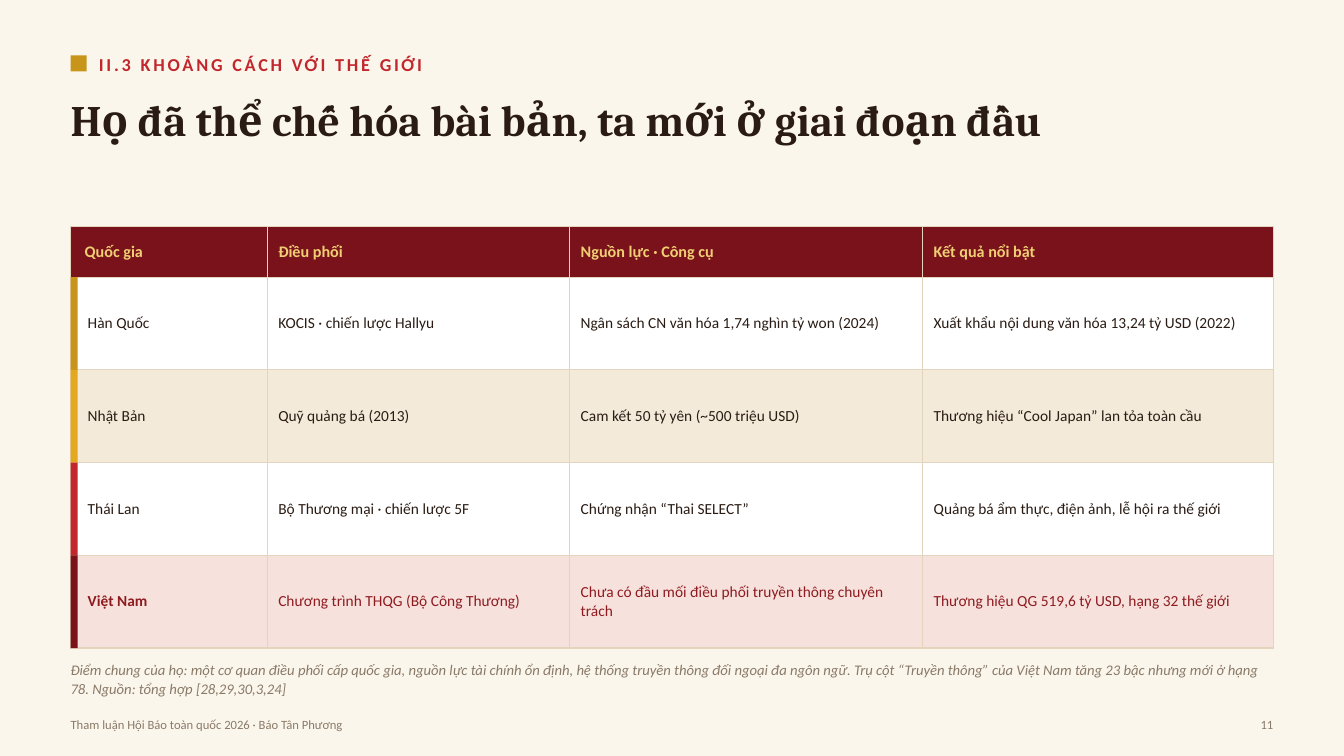
from dataclasses import dataclass

from lxml import etree
from pptx import Presentation
from pptx.dml.color import RGBColor
from pptx.enum.shapes import MSO_SHAPE
from pptx.enum.text import MSO_ANCHOR, MSO_AUTO_SIZE, PP_ALIGN
from pptx.oxml.ns import qn
from pptx.slide import Slide
from pptx.table import _Cell
from pptx.text.text import TextFrame
from pptx.util import Inches, Pt

RECTANGLE = MSO_SHAPE.RECTANGLE
TOP, MIDDLE = MSO_ANCHOR.TOP, MSO_ANCHOR.MIDDLE
LEFT, RIGHT = PP_ALIGN.LEFT, PP_ALIGN.RIGHT
NO_AUTOFIT = MSO_AUTO_SIZE.NONE


@dataclass(frozen=True)
class TextStyle:
    size: float
    color: str
    font: str = "Calibri"
    bold: bool = False
    italic: bool = False
    tracking: float = 0


@dataclass(frozen=True)
class Theme:
    paper: str = "FBF6EC"
    white: str = "FFFFFF"
    sand: str = "F4EADA"
    blush: str = "F7E1DC"
    grid: str = "E3D4BD"
    gold: str = "C8951B"
    amber: str = "E3A81E"
    red: str = "C1272D"
    maroon: str = "7A121B"
    section: TextStyle = TextStyle(13, "C1272D", bold=True, tracking=2)
    title: TextStyle = TextStyle(31, "2A1C14", font="Cambria", bold=True)
    header: TextStyle = TextStyle(11.5, "F0CE73", bold=True)
    body: TextStyle = TextStyle(11, "2A1C14")
    home: TextStyle = TextStyle(11, "8E1B20")
    home_name: TextStyle = TextStyle(11, "8E1B20", bold=True)
    note: TextStyle = TextStyle(10.5, "8A7A68", italic=True)
    footer: TextStyle = TextStyle(9, "8A7A68")


@dataclass(frozen=True)
class Box:
    left: float
    top: float
    width: float
    height: float


@dataclass(frozen=True)
class Label:
    text: str
    box: Box
    style: TextStyle
    anchor: MSO_ANCHOR = MIDDLE
    align: PP_ALIGN = LEFT
    line_spacing: float = 1.0


@dataclass(frozen=True)
class Country:
    texts: tuple[str, str, str, str]
    accent: str
    fill: str
    name_style: TextStyle
    detail_style: TextStyle


THEME = Theme()
MARGIN, CONTENT_WIDTH = 0.7, 11.93
TABLE_TOP, HEADER_HEIGHT, COUNTRY_HEIGHT = 2.25, 0.5, 0.92
COLUMN_WIDTHS = (1.95, 3, 3.5, 3.48)
ACCENT_WIDTH = 0.07
CELL_INSET, HEADER_FIRST_INSET, NAME_INSET = 0.11, 0.14, 0.17

TITLE = Label("Họ đã thể chế hóa bài bản, ta mới ở giai đoạn đầu",
              Box(MARGIN, 0.92, CONTENT_WIDTH, 1), THEME.title, TOP)
LABELS = (
    Label("II.3 KHOẢNG CÁCH VỚI THẾ GIỚI", Box(0.98, 0.47, 11.63, 0.34), THEME.section),
    Label("Điểm chung của họ: một cơ quan điều phối cấp quốc gia, nguồn lực tài chính "
          "ổn định, hệ thống truyền thông đối ngoại đa ngôn ngữ. Trụ cột “Truyền thông” "
          "của Việt Nam tăng 23 bậc nhưng mới ở hạng 78. Nguồn: tổng hợp [28,29,30,3,24]",
          Box(MARGIN, 6.55, CONTENT_WIDTH, 0.6), THEME.note, TOP, line_spacing=1.05),
    Label("Tham luận Hội Báo toàn quốc 2026 · Báo Tân Phương",
          Box(MARGIN, 7.04, 9, 0.3), THEME.footer),
    Label("11", Box(12.03, 7.04, 0.6, 0.3), THEME.footer, align=RIGHT),
)
HEADERS = ("Quốc gia", "Điều phối", "Nguồn lực · Công cụ", "Kết quả nổi bật")
COUNTRIES = (
    Country(("Hàn Quốc", "KOCIS · chiến lược Hallyu",
             "Ngân sách CN văn hóa 1,74 nghìn tỷ won (2024)",
             "Xuất khẩu nội dung văn hóa 13,24 tỷ USD (2022)"),
            THEME.gold, THEME.white, THEME.body, THEME.body),
    Country(("Nhật Bản", "Quỹ quảng bá (2013)",
             "Cam kết 50 tỷ yên (~500 triệu USD)",
             "Thương hiệu “Cool Japan” lan tỏa toàn cầu"),
            THEME.amber, THEME.sand, THEME.body, THEME.body),
    Country(("Thái Lan", "Bộ Thương mại · chiến lược 5F",
             "Chứng nhận “Thai SELECT”",
             "Quảng bá ẩm thực, điện ảnh, lễ hội ra thế giới"),
            THEME.red, THEME.white, THEME.body, THEME.body),
    Country(("Việt Nam", "Chương trình THQG (Bộ Công Thương)",
             "Chưa có đầu mối điều phối truyền thông chuyên trách",
             "Thương hiệu QG 519,6 tỷ USD, hạng 32 thế giới"),
            THEME.maroon, THEME.blush, THEME.home_name, THEME.home),
)


def emu(box: Box) -> tuple[int, int, int, int]:
    return Inches(box.left), Inches(box.top), Inches(box.width), Inches(box.height)


def add_run(frame: TextFrame, text: str, style: TextStyle) -> None:
    run = frame.paragraphs[0].add_run()
    run.text = text
    run.font.name = style.font
    run.font.size = Pt(style.size)
    run.font.bold = style.bold
    run.font.italic = style.italic
    run.font.color.rgb = RGBColor.from_string(style.color)
    if style.tracking:
        run.font._element.set("spc", str(int(style.tracking * 100)))


def fill_frame(frame: TextFrame, label: Label) -> None:
    frame.word_wrap = True
    frame.auto_size = NO_AUTOFIT
    frame.margin_left = frame.margin_right = frame.margin_top = frame.margin_bottom = 0
    frame.vertical_anchor = label.anchor
    frame.paragraphs[0].alignment = label.align
    frame.paragraphs[0].line_spacing = label.line_spacing
    add_run(frame, label.text, label.style)


def add_title(slide: Slide, label: Label) -> None:
    title = slide.shapes.title
    title.left, title.top, title.width, title.height = emu(label.box)
    fill_frame(title.text_frame, label)


def add_block(slide: Slide, box: Box, color: str) -> None:
    block = slide.shapes.add_shape(RECTANGLE, *emu(box))
    block.shadow.inherit = False
    block.fill.solid()
    block.fill.fore_color.rgb = RGBColor.from_string(color)
    block.line.fill.background()


def add_borders(cell: _Cell, color: str) -> None:
    properties = cell._tc.get_or_add_tcPr()
    for side in ("a:lnL", "a:lnR", "a:lnT", "a:lnB"):
        line = etree.SubElement(properties, qn(side), w=str(Pt(1)))
        solid = etree.SubElement(line, qn("a:solidFill"))
        etree.SubElement(solid, qn("a:srgbClr"), val=color)


def fill_cell(cell: _Cell, text: str, style: TextStyle, fill: str, inset: float) -> None:
    add_borders(cell, THEME.grid)
    cell.fill.solid()
    cell.fill.fore_color.rgb = RGBColor.from_string(fill)
    cell.vertical_anchor = MIDDLE
    cell.margin_left, cell.margin_right = Inches(inset), Inches(CELL_INSET)
    cell.margin_top = cell.margin_bottom = Inches(0.06)
    add_run(cell.text_frame, text, style)


def add_country_table(slide: Slide) -> None:
    height = HEADER_HEIGHT + COUNTRY_HEIGHT * len(COUNTRIES)
    box = Box(MARGIN, TABLE_TOP, CONTENT_WIDTH, height)
    table = slide.shapes.add_table(len(COUNTRIES) + 1, len(HEADERS), *emu(box)).table
    table.first_row = table.horz_banding = False
    for column, width in zip(table.columns, COLUMN_WIDTHS):
        column.width = Inches(width)
    table.rows[0].height = Inches(HEADER_HEIGHT)
    for index, header in enumerate(HEADERS):
        inset = CELL_INSET if index else HEADER_FIRST_INSET
        fill_cell(table.cell(0, index), header, THEME.header, THEME.maroon, inset)

    for row, country in enumerate(COUNTRIES):
        table.rows[row + 1].height = Inches(COUNTRY_HEIGHT)
        for index, text in enumerate(country.texts):
            style = country.detail_style if index else country.name_style
            inset = CELL_INSET if index else NAME_INSET
            fill_cell(table.cell(row + 1, index), text, style, country.fill, inset)
        top = TABLE_TOP + HEADER_HEIGHT + row * COUNTRY_HEIGHT
        add_block(slide, Box(MARGIN, top, ACCENT_WIDTH, COUNTRY_HEIGHT), country.accent)


def main() -> None:
    deck = Presentation()
    deck.slide_width, deck.slide_height = Inches(13.33), Inches(7.5)
    slide = deck.slides.add_slide(deck.slide_layouts.get_by_name("Title Only"))
    slide.background.fill.solid()
    slide.background.fill.fore_color.rgb = RGBColor.from_string(THEME.paper)
    add_block(slide, Box(MARGIN, 0.55, 0.16, 0.16), THEME.gold)
    add_title(slide, TITLE)
    add_country_table(slide)
    for label in LABELS:
        fill_frame(slide.shapes.add_textbox(*emu(label.box)).text_frame, label)
    deck.save("out.pptx")


if __name__ == "__main__":
    main()
